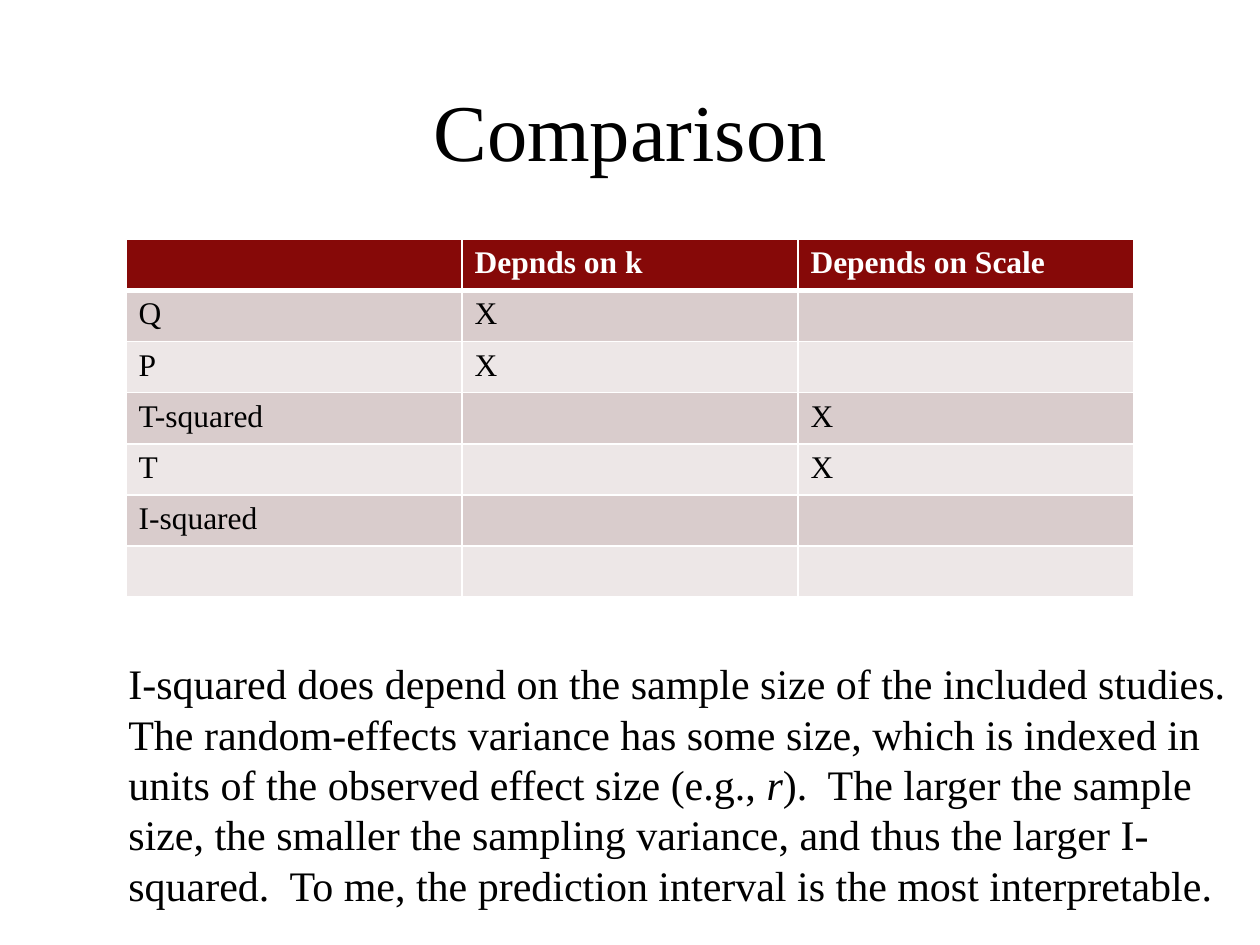
import pptx
import pptx.util
import pptx.dml.color
import pptx.enum.text
import pptx.oxml
import pptx.oxml.ns
import lxml.etree
from pptx.util import Inches

TITLE = "Comparison"
ROWS = [
    ("", "Depnds on k", "Depends on Scale"),
    ("Q", "X", ""),
    ("P", "X", ""),
    ("T-squared", "", "X"),
    ("T", "", "X"),
    ("I-squared", "", ""),
    ("", "", ""),
]
REMARK = [
    ("I-squared does depend on the sample size of the included studies.  "
     "The random-effects variance has some size, which is indexed in units "
     "of the observed effect size (e.g., ", False),
    ("r", True),
    (").  The larger the sample size, the smaller the sampling variance, "
     "and thus the larger I-squared.  To me, the prediction interval is the "
     "most interpretable.", False),
]
THEME = {
    "font": "Times New Roman",
    "text": "000000", "header_text": "FFFFFF", "border": "FFFFFF",
    "header": "860908", "bands": ("D9CCCC", "EDE7E7"),
    "title_size": 46, "table_size": 18, "remark_size": 24,
}


def rgb(value):
    return pptx.dml.color.RGBColor.from_string(value)


def style(para, size, color=THEME["text"], bold=False):
    para.font.name = THEME["font"]
    para.font.size = pptx.util.Pt(size)
    para.font.color.rgb = rgb(color)
    para.font.bold = bold


def set_borders(cell, bottom, top):
    properties = cell._tc.get_or_add_tcPr()
    widths = {"lnL": 1, "lnR": 1, "lnT": top, "lnB": bottom}
    for index, (tag, width) in enumerate(widths.items()):
        line = lxml.etree.Element(pptx.oxml.ns.qn("a:" + tag), w=str(pptx.util.Pt(width)))
        fill = lxml.etree.SubElement(line, pptx.oxml.ns.qn("a:solidFill"))
        lxml.etree.SubElement(fill, pptx.oxml.ns.qn("a:srgbClr"), val=THEME["border"])
        properties.insert(index, line)


def add_title(slide):
    title = slide.shapes.title
    title.left, title.top = Inches(1), Inches(0.55)
    title.width, title.height = Inches(8), Inches(0.95)
    title.text_frame.text = TITLE
    title.text_frame.vertical_anchor = pptx.enum.text.MSO_ANCHOR.MIDDLE
    para = title.text_frame.paragraphs[0]
    para.alignment = pptx.enum.text.PP_ALIGN.CENTER
    style(para, THEME["title_size"])


def add_comparison(slide):
    frame = slide.shapes.add_table(len(ROWS), len(ROWS[0]), Inches(1), Inches(1.9),
                                   Inches(8), Inches(2.84))
    for r, row in enumerate(ROWS):
        header = r == 0
        for c, text in enumerate(row):
            cell = frame.table.cell(r, c)
            cell.text = text
            cell.fill.solid()
            cell.fill.fore_color.rgb = rgb(
                THEME["header"] if header else THEME["bands"][(r - 1) % 2])
            set_borders(cell, bottom=3 if header else 1, top=3 if r == 1 else 1)
            style(cell.text_frame.paragraphs[0], THEME["table_size"],
                  THEME["header_text"] if header else THEME["text"], header)


def add_remark(slide):
    box = slide.shapes.add_textbox(Inches(0.92), Inches(5.17), Inches(9.08), Inches(2.12))
    box.text_frame.word_wrap = True
    para = box.text_frame.paragraphs[0]
    for text, italic in REMARK:
        span = para.add_run()
        span.text = text
        if italic:
            span.font.italic = True
    style(para, THEME["remark_size"])


def main():
    deck = pptx.Presentation()
    deck.slide_width, deck.slide_height = Inches(10), Inches(7.5)
    slide = deck.slides.add_slide(deck.slide_layouts[5])
    add_title(slide)
    add_comparison(slide)
    add_remark(slide)
    deck.save("out.pptx")


if __name__ == "__main__":
    main()
